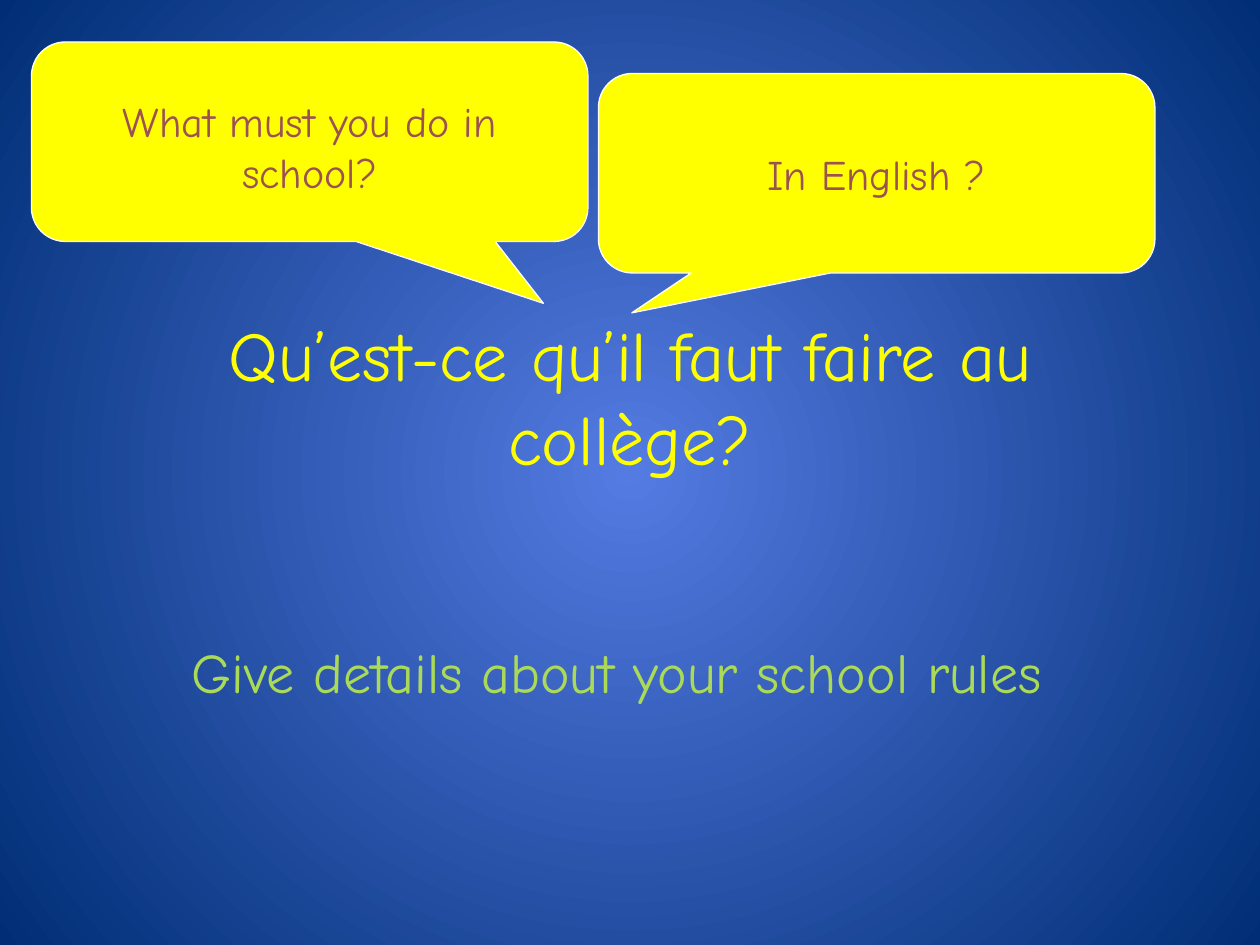
from pptx import Presentation
from pptx.util import Pt
from pptx.dml.color import RGBColor
from pptx.enum.shapes import MSO_SHAPE
from pptx.enum.text import PP_ALIGN, MSO_ANCHOR
from pptx.oxml import parse_xml
from pptx.oxml.ns import qn, nsdecls

FONT = "Comic Neue"
HEX = {
    "glow": "547BE2",
    "edge": "002E75",
    "yellow": "FFFF00",
    "green": "ABD958",
    "brown": "9C5252",
    "white": "FFFFFF",
}


def tint(name):
    return RGBColor.from_string(HEX[name])


def write(shape, text, size, color, anchor=MSO_ANCHOR.MIDDLE, top=3.6, before=0):
    frame = shape.text_frame
    frame.word_wrap = True
    frame.vertical_anchor = anchor
    frame.margin_top = Pt(top)
    para = frame.paragraphs[0]
    para.alignment = PP_ALIGN.CENTER
    para.space_before = Pt(before)
    run = para.add_run()
    run.text = text
    run.font.name = FONT
    run.font.size = Pt(size)
    run.font.color.rgb = tint(color)


def place(shape, box):
    shape.left, shape.top, shape.width, shape.height = map(Pt, box)


def backdrop(slide):
    fill = slide.background.fill
    fill.gradient()
    for stop, name, pos in zip(fill.gradient_stops, ("glow", "edge"), (0, 1)):
        stop.color.rgb = tint(name)
        stop.position = pos
    line = next(slide.element.iter(qn("a:lin")))
    round_path = parse_xml(
        f'<a:path {nsdecls("a")} path="circle">'
        '<a:fillToRect l="50000" t="50000" r="50000" b="50000"/></a:path>'
    )
    line.getparent().replace(line, round_path)


def heading(slide, box):
    x, y, w, h = box
    title, rules = slide.placeholders
    place(title, (x, y, w, 116))
    write(title, "Qu’est-ce qu’il faut faire au collège?", 40, "yellow")
    place(rules, (x + 22.5, y + h - 73.5, w - 60, 73.5))
    write(rules, "Give details about your school rules", 32, "green",
          anchor=MSO_ANCHOR.TOP, before=6.4)


def bubble(slide, box, text, tail, **style):
    shape = slide.shapes.add_shape(
        MSO_SHAPE.ROUNDED_RECTANGULAR_CALLOUT, *map(Pt, box))
    shape.shadow.inherit = False
    for i, value in enumerate((*tail, 0.17)):
        shape.adjustments[i] = value
    shape.fill.solid()
    shape.fill.fore_color.rgb = tint("yellow")
    shape.line.color.rgb = tint("white")
    shape.line.width = Pt(0.75)
    write(shape, text, 24, "brown", **style)


def main():
    deck = Presentation()
    deck.slide_width, deck.slide_height = Pt(720), Pt(540)
    slide = deck.slides.add_slide(deck.slide_layouts[0])
    backdrop(slide)
    heading(slide, (54, 167.75, 612, 266.5))
    bubble(slide, (18, 24, 318, 114), "What must you do in school?",
           (0.42, 0.81), anchor=MSO_ANCHOR.TOP, top=25)
    bubble(slide, (342, 42, 318, 114), "In English ?", (-0.44, 0.7))
    deck.save("out.pptx")


if __name__ == "__main__":
    main()
